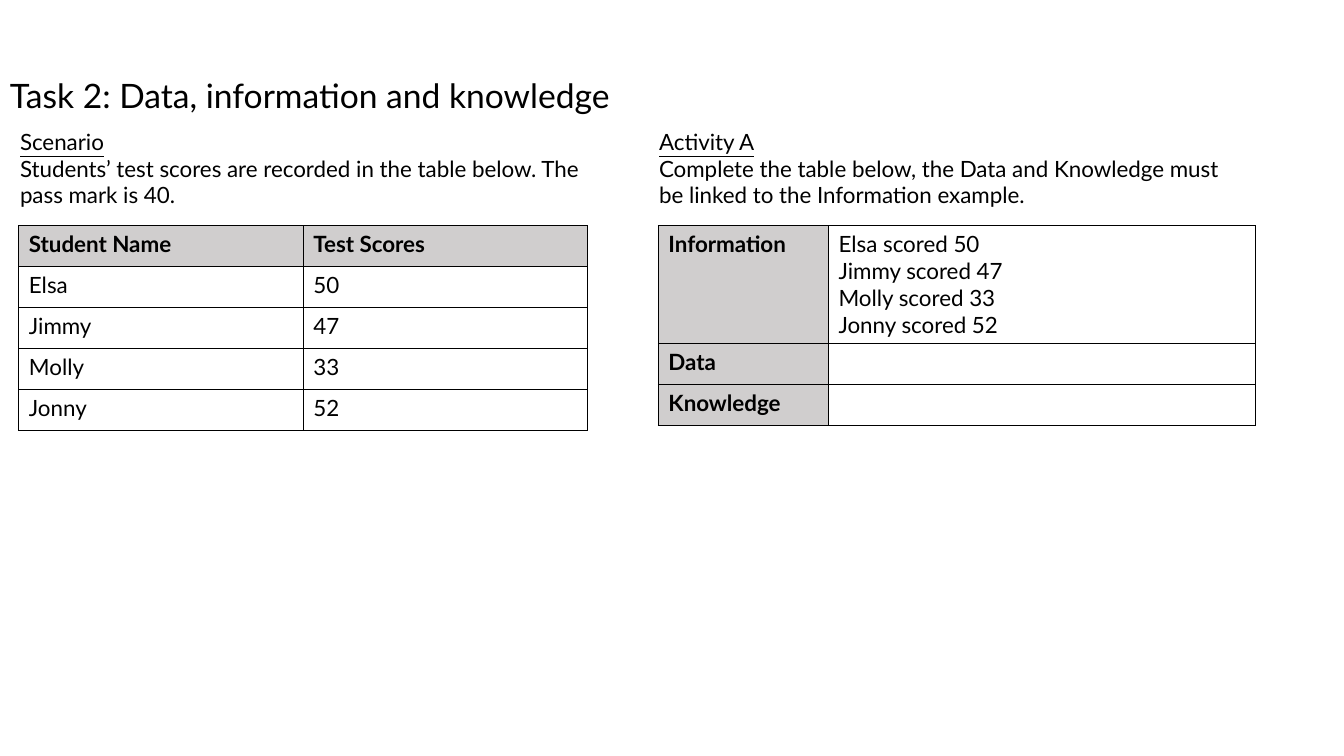
from lxml import etree
from pptx import Presentation
from pptx.dml.color import RGBColor
from pptx.enum.text import MSO_AUTO_SIZE
from pptx.oxml.ns import qn
from pptx.util import Pt

GROW = MSO_AUTO_SIZE.SHAPE_TO_FIT_TEXT
BORDER_SIDES = ("a:lnL", "a:lnR", "a:lnT", "a:lnB")
ROW_HEIGHT = 29.2
TABLE_TOP = 161.3


def color(value):
    return RGBColor.from_string(value)


class SlideBuilder:
    font = "Lato"
    ink = "000000"
    header_fill = "D0CECE"
    size = 16

    def __init__(self, slide):
        self.slide = slide

    def add_text(self, para, text, size=None, bold=False, underline=False):
        span = para.add_run()
        span.text = text
        span.font.name = self.font
        span.font.size = Pt(size or self.size)
        span.font.bold = bold
        span.font.underline = underline
        span.font.color.rgb = color(self.ink)

    def add_lines(self, frame, lines, **style):
        """Set each line as a paragraph of its own."""
        for number, line in enumerate(lines):
            para = frame.add_paragraph() if number else frame.paragraphs[0]
            self.add_text(para, line, **style)

    def text_box(self, left, top, width, height):
        """Add an empty wrapping box and return its text frame."""
        box = self.slide.shapes.add_textbox(Pt(left), Pt(top), Pt(width), Pt(height))
        frame = box.text_frame
        frame.word_wrap = True
        frame.auto_size = GROW
        return frame

    def title(self, text):
        frame = self.text_box(0, 49.7, 615.6, 36)
        self.add_text(frame.paragraphs[0], text, size=24)

    def instructions(self, left, width, heading, body):
        frame = self.text_box(left, 87.8, width, 65.5)
        self.add_text(frame.paragraphs[0], heading, underline=True)
        self.add_text(frame.add_paragraph(), body)

    def border(self, cell):
        properties = cell._tc.get_or_add_tcPr()
        for position, side in enumerate(BORDER_SIDES):
            line = etree.Element(qn(side), w=str(Pt(1)))
            fill = etree.SubElement(line, qn("a:solidFill"))
            etree.SubElement(fill, qn("a:srgbClr"), val=self.ink)
            properties.insert(position, line)

    def table(self, left, widths, heights, rows, header_row=False):
        """Add a grid whose headings fill the first row or the first column."""
        table = self.slide.shapes.add_table(
            len(rows), len(widths), Pt(left), Pt(TABLE_TOP),
            Pt(sum(widths)), Pt(sum(heights))).table
        table.first_row = header_row
        table.first_col = not header_row
        table.horz_banding = False
        for column, width in zip(table.columns, widths):
            column.width = Pt(width)
        for row, height in zip(table.rows, heights):
            row.height = Pt(height)
        for row_number, row in enumerate(rows):
            for column_number, text in enumerate(row):
                cell = table.cell(row_number, column_number)
                is_header = (row_number if header_row else column_number) == 0
                if is_header:
                    cell.fill.solid()
                    cell.fill.fore_color.rgb = color(self.header_fill)
                else:
                    cell.fill.background()
                self.border(cell)
                if text:
                    self.add_lines(cell.text_frame, text.split("\n"), bold=is_header)


def main():
    deck = Presentation()
    deck.slide_width, deck.slide_height = Pt(960), Pt(540)
    page = SlideBuilder(deck.slides.add_slide(deck.slide_layouts[6]))

    scores = [("Elsa", "50"), ("Jimmy", "47"), ("Molly", "33"), ("Jonny", "52")]
    information = "\n".join(f"{name} scored {score}" for name, score in scores)

    page.title("Task 2: Data, information and knowledge")
    page.instructions(
        7.2, 440.6, "Scenario",
        "Students’ test scores are recorded in the table below. The pass mark is 40.")
    page.table(13.5, [203.2, 203.2], [ROW_HEIGHT] * 5,
               [("Student Name", "Test Scores"), *scores], header_row=True)
    page.instructions(
        463.7, 434.9, "Activity A",
        "Complete the table below, the Data and Knowledge must be linked to the "
        "Information example.")
    page.table(470.3, [121.5, 304.9], [83.8, ROW_HEIGHT, ROW_HEIGHT],
               [("Information", information), ("Data", ""), ("Knowledge", "")])
    deck.save("out.pptx")


if __name__ == "__main__":
    main()
